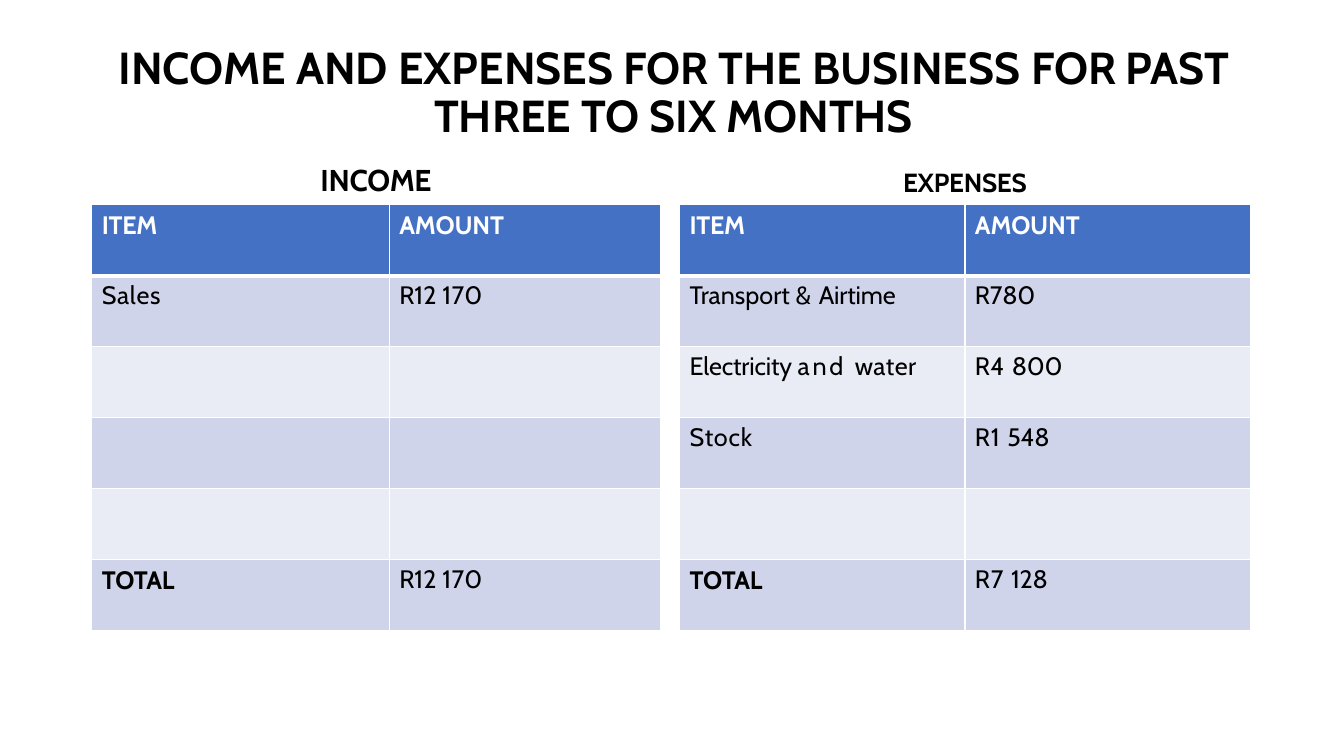
from lxml import etree
from pptx import Presentation
from pptx.dml.color import RGBColor
from pptx.enum.text import MSO_ANCHOR, MSO_AUTO_SIZE, PP_ALIGN
from pptx.oxml.ns import qn
from pptx.util import Inches, Pt

TOP, BOTTOM = MSO_ANCHOR.TOP, MSO_ANCHOR.BOTTOM
CENTER, LEFT = PP_ALIGN.CENTER, PP_ALIGN.LEFT
NO_AUTOFIT = MSO_AUTO_SIZE.NONE

COLORS = {"text": "000000", "white": "FFFFFF", "header": "4471C4",
          "band_dark": "CFD4EA", "band_light": "E9EBF5"}
FONT = "Cabin"
TITLE_ONLY = 5
ROW_HEIGHT = 0.705
CAPTION_HEIGHT = 0.4
CAPTION_GAP = 0.07

# Each cell is a list of (text, letter spacing in points); [] is an empty cell
HEADER = [[("ITEM", -0.2)], [("AMOUNT", -0.1)]]
TOTAL = [("TOTAL", -0.1)]
INCOME_SUM = [("R12 ", 0), ("170", 0.3)]
BLANK = [[], []]

INCOME_ROWS = [
    HEADER,
    [[("Sales", 0.5)], INCOME_SUM],
    BLANK, BLANK, BLANK,
    [TOTAL, INCOME_SUM],
]
EXPENSE_ROWS = [
    HEADER,
    [[("Transport ", 0), ("& ", 0.8), ("Airtime", -0.1)], [("R780", -0.2)]],
    [[("Electricity ", -0.1), ("and ", 2), ("water", 0.4)],
     [("R4 ", 0.6), ("800", -0.2)]],
    [[("Stock", 0.6)], [("R1 ", 0.6), ("548", -0.2)]],
    BLANK,
    [TOTAL, [("R7 ", 0.6), ("128", -0.2)]],
]


def write(frame, runs, size=18, color="text", bold=False, align=LEFT, line=None):
    """Fill the first paragraph with (text, letter spacing) runs."""
    frame.word_wrap = True
    paragraph = frame.paragraphs[0]
    paragraph.alignment = align
    if line:
        paragraph.line_spacing = Pt(line)
    for text, spacing in runs:
        run = paragraph.add_run()
        run.text = text
        font = run.font
        font.name, font.size, font.bold = FONT, Pt(size), bold
        font.color.rgb = RGBColor.from_string(COLORS[color])
        font._element.set("spc", str(round(spacing * 100)))


def set_insets(frame, top=0):
    frame.margin_left = frame.margin_right = frame.margin_bottom = 0
    frame.margin_top = Inches(top)


def set_borders(cell, top, bottom):
    properties = cell._tc.get_or_add_tcPr()
    for side, width in (("L", 1), ("R", 1), ("T", top), ("B", bottom)):
        border = etree.SubElement(properties, qn(f"a:ln{side}"), w=str(Pt(width)))
        fill = etree.SubElement(border, qn("a:solidFill"))
        etree.SubElement(fill, qn("a:srgbClr"), val=COLORS["white"])


def add_title(slide, left, top, width, height):
    title = slide.shapes.title
    title.left, title.top = Inches(left), Inches(top)
    title.width, title.height = Inches(width), Inches(height)
    frame = title.text_frame
    frame.auto_size, frame.vertical_anchor = NO_AUTOFIT, TOP
    set_insets(frame, top=0.08)
    write(frame, [("INCOME AND EXPENSES FOR THE BUSINESS ", 0), ("FOR PAST ", -0.2),
                  ("THREE TO SIX ", 0), ("MONTHS", -0.1)],
          size=32, bold=True, align=CENTER, line=34.5)


def add_ledger(slide, left, top, column_widths, rows, caption, caption_size):
    """Place a ledger table at left, top with its caption centred above it."""
    width = sum(column_widths)

    # Caption
    caption_box = slide.shapes.add_textbox(
        Inches(left), Inches(top - CAPTION_GAP - CAPTION_HEIGHT),
        Inches(width), Inches(CAPTION_HEIGHT))
    caption_box.text_frame.vertical_anchor = BOTTOM
    set_insets(caption_box.text_frame)
    write(caption_box.text_frame, [(caption, -0.2)], size=caption_size,
          bold=True, align=CENTER)

    # Table grid
    ledger = slide.shapes.add_table(
        len(rows), len(column_widths), Inches(left), Inches(top),
        Inches(width), Inches(ROW_HEIGHT * len(rows))).table
    for column, column_width in zip(ledger.columns, column_widths):
        column.width = Inches(column_width)

    # Cells
    for r, row in enumerate(rows):
        ledger.rows[r].height = Inches(ROW_HEIGHT)
        is_header = r == 0
        band = "header" if is_header else "band_dark" if r % 2 else "band_light"
        for c, runs in enumerate(row):
            cell = ledger.cell(r, c)
            set_borders(cell, top=3 if r == 1 else 1, bottom=3 if is_header else 1)
            cell.fill.solid()
            cell.fill.fore_color.rgb = RGBColor.from_string(COLORS[band])
            set_insets(cell, top=0.05 if is_header or runs is TOTAL else 0.04)
            cell.margin_left = Inches(0.1)
            write(cell.text_frame, runs, color="white" if is_header else "text",
                  bold=is_header or runs is TOTAL)


def main():
    presentation = Presentation()
    presentation.slide_width = Inches(13.33)
    presentation.slide_height = Inches(7.5)
    slide = presentation.slides.add_slide(presentation.slide_layouts[TITLE_ONLY])

    add_title(slide, 1.08, 0.37, 11.2, 1.1)
    add_ledger(slide, 0.91, 2.03, [2.95, 2.69], INCOME_ROWS, "INCOME", 21.5)
    add_ledger(slide, 6.74, 2.03, [2.83, 2.83], EXPENSE_ROWS, "EXPENSES", 18.7)
    presentation.save("out.pptx")


if __name__ == "__main__":
    main()
